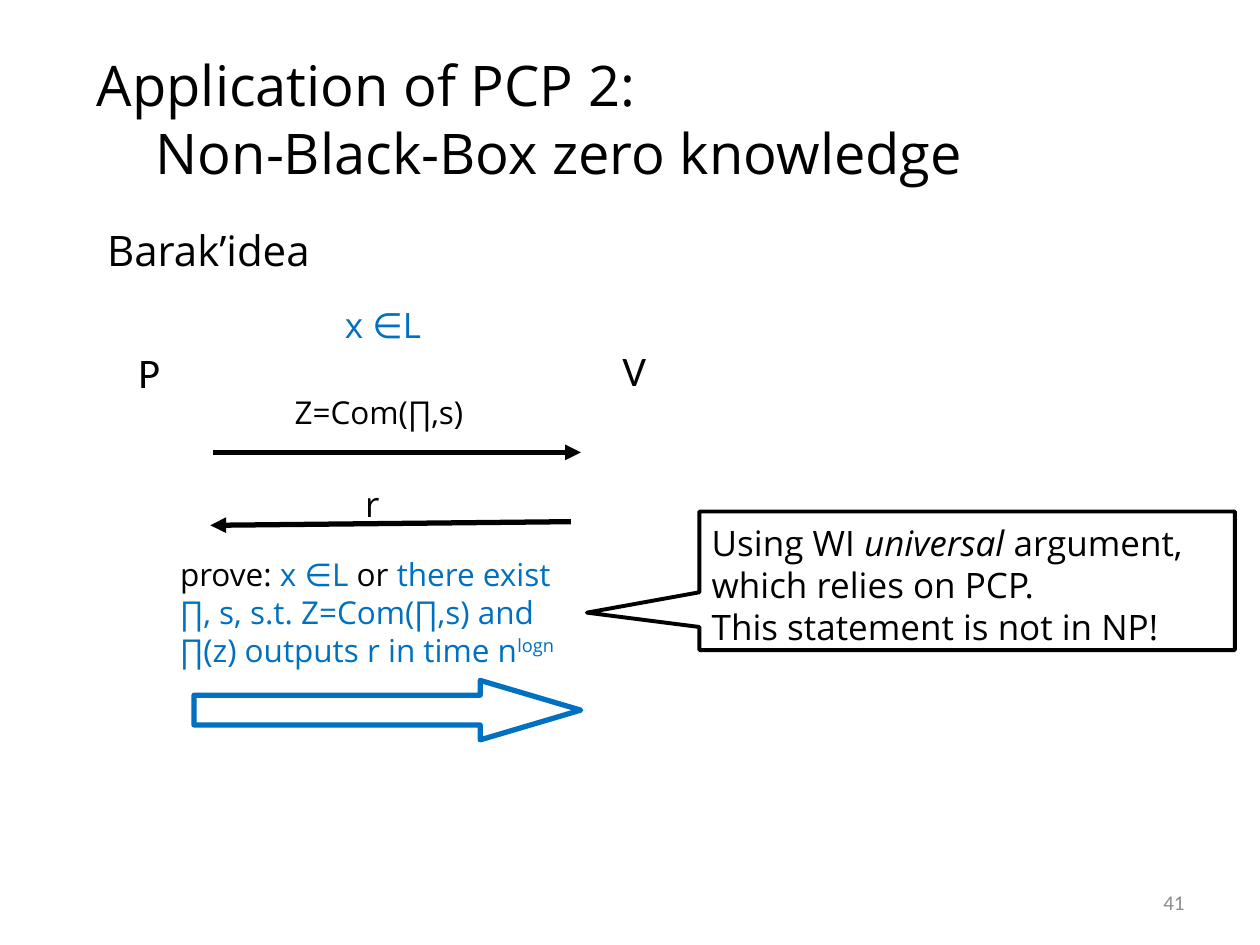
from lxml import etree
from pptx import Presentation
from pptx import util as u
from pptx.dml.color import RGBColor
from pptx.enum import shapes, text
from pptx.oxml.ns import qn

COLORS = {"black": "000000", "blue": "0070C0", "white": "FFFFFF", "gray": "8C8C8C"}
FONT = "Open Sans"
LINE_RATIO = 1.2


def color(name):
    return RGBColor.from_string(COLORS[name])


def place(s, box):
    s.left, s.top, s.width, s.height = (u.Pt(v) for v in box)


def write(s, paragraphs, size, font=FONT, align=text.PP_ALIGN.LEFT,
          anchor=text.MSO_ANCHOR.TOP):
    """Fill s; each run is (words, colour name, optional 'italic' or 'super')."""
    tf = s.text_frame
    tf.word_wrap = True
    tf.auto_size = text.MSO_AUTO_SIZE.NONE
    tf.vertical_anchor = anchor
    tf.margin_left = tf.margin_right = u.Pt(7.2)
    tf.margin_top, tf.margin_bottom = u.Pt(3.6 + size * 0.1), u.Pt(3.6)
    for i, runs in enumerate(paragraphs):
        p = tf.paragraphs[0] if i == 0 else tf.add_paragraph()
        p.alignment = align
        p.line_spacing = u.Pt(size * LINE_RATIO)
        p.space_before = u.Pt(0)
        for words, tint, *style in runs:
            r = p.add_run()
            r.text = words
            r.font.name, r.font.size = font, u.Pt(size)
            r.font.color.rgb = color(tint)
            if "italic" in style:
                r.font.italic = True
            if "super" in style:
                r.font._element.set("baseline", "30000")
    return tf


def add_label(slide, box, paragraphs, size, **options):
    s = slide.shapes.add_textbox(*(u.Pt(v) for v in box))
    write(s, paragraphs, size, **options)


def add_outline(slide, kind, box, adjustments, tint, weight):
    s = slide.shapes.add_shape(kind, *(u.Pt(v) for v in box))
    s.shadow.inherit = False
    for i, value in enumerate(adjustments):
        s.adjustments[i] = value
    s.fill.solid()
    s.fill.fore_color.rgb = color("white")
    s.line.color.rgb = color(tint)
    s.line.width = u.Pt(weight)
    return s


def add_arrow(slide, start, end):
    s = slide.shapes.add_connector(shapes.MSO_CONNECTOR.STRAIGHT,
                                   *(u.Pt(v) for v in start + end))
    s.line.color.rgb = color("black")
    s.line.width = u.Pt(3)
    etree.SubElement(s.line._get_or_add_ln(), qn("a:tailEnd"), type="triangle")
    etree.SubElement(s._element.spPr, qn("a:effectLst"))


def set_indent(p, points, hanging=0):
    pPr = p._p.get_or_add_pPr()
    pPr.set("marL", str(u.Pt(points)))
    pPr.set("indent", str(u.Pt(hanging)))
    return pPr


def add_headings(slide):
    title, body = slide.shapes.title, slide.placeholders[1]
    place(title, (48.2, 20.9, 648, 90))
    tf = write(title, [[("Application of PCP 2:", "black")],
                       [("Non-Black-Box zero knowledge", "black")]],
               32, anchor=text.MSO_ANCHOR.MIDDLE)
    set_indent(tf.paragraphs[1], 33.5)

    place(body, (54, 122.4, 150, 36))
    tf = write(body, [[("Barak’idea", "black")]], 24)
    etree.SubElement(set_indent(tf.paragraphs[0], 0), qn("a:buNone"))


def add_protocol(slide):
    # Statement and the two parties
    add_label(slide, (190, 167.8, 90, 31), [[("x ∈L", "blue")]], 20)
    for name, x, y in (("P", 72, 192.2), ("V", 348.5, 190.8)):
        add_label(slide, (x, y, 48, 36), [[(name, "black")]], 24, font="Calibri")

    # Commitment and reply
    add_label(slide, (161.3, 218.9, 142, 29), [[("Z=Com(∏,s)", "black")]], 18)
    add_arrow(slide, (121.7, 258.5), (331.9, 258.5))
    add_label(slide, (201.6, 270, 66, 31), [[("r", "black")]], 20)
    add_arrow(slide, (326.2, 298.1), (120.2, 300.2))

    # Proof
    add_label(slide, (95.8, 311.8, 244, 73), [[
        ("prove: ", "black"), ("x ∈L ", "blue"), ("or ", "black"),
        ("there exist ∏, s, s.t. Z=Com(∏,s) and ∏(z) outputs r in time n", "blue"),
        ("logn", "blue", "super")]], 18)
    add_outline(slide, shapes.MSO_SHAPE.RIGHT_ARROW, (110.9, 388.8, 221, 34),
                (0.5, 1.69), "blue", 3)


def add_remark(slide):
    s = add_outline(slide, shapes.MSO_SHAPE.RECTANGULAR_CALLOUT,
                    (399.6, 292.3, 306, 79.2), (-0.71, 0.23), "black", 2.25)
    write(s, [[("Using WI ", "black"), ("universal ", "black", "italic"),
               ("argument, which relies on PCP.", "black")],
              [("This statement is not in NP!", "black")]], 20)


def main():
    prs = Presentation()
    prs.slide_width, prs.slide_height = u.Pt(720), u.Pt(540)
    slide = prs.slides.add_slide(prs.slide_layouts[1])
    add_headings(slide)
    add_protocol(slide)
    add_remark(slide)
    # Page number
    add_label(slide, (516, 500.5, 168, 28.8), [[("41", "gray")]], 12, font="Calibri",
              align=text.PP_ALIGN.RIGHT, anchor=text.MSO_ANCHOR.MIDDLE)
    prs.save("out.pptx")


if __name__ == "__main__":
    main()
